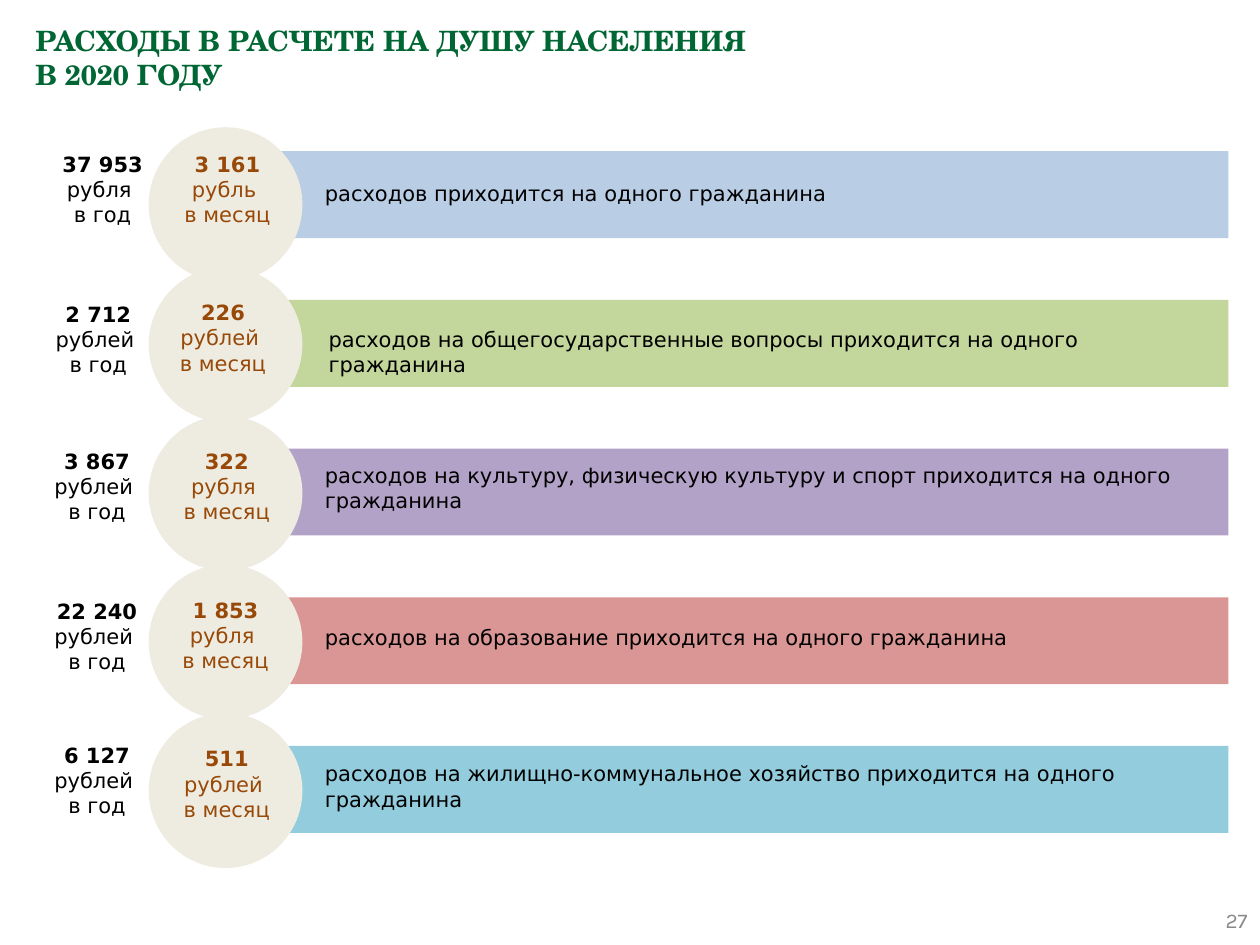
import pptx
import pptx.util
import pptx.dml.color
import pptx.enum.shapes
import pptx.enum.text

Inches = pptx.util.Inches
ALIGN = pptx.enum.text.PP_ALIGN
ANCHOR = pptx.enum.text.MSO_ANCHOR
AUTO_SIZE = pptx.enum.text.MSO_AUTO_SIZE
SHAPE = pptx.enum.shapes.MSO_SHAPE

COLORS = {
    "title": "006633", "page": "898989", "text": "000000", "monthly": "984807",
    "circle": "EEECE1", "total": "B9CDE5", "government": "C3D69B",
    "culture": "B3A2C7", "education": "D99694", "housing": "93CDDD",
}
BODY = {"name": "DejaVu Sans", "size": pptx.util.Pt(12), "bold": False}
BOLD = {**BODY, "bold": True}
TITLE = {"name": "TeX Gyre Schola", "size": pptx.util.Pt(16), "bold": True}
PAGE = {"name": "Karla", "size": pptx.util.Pt(12), "bold": False}

BAR_TOP, ROW_PITCH = 1.2, 1.18

presentation = pptx.Presentation()
presentation.slide_width, presentation.slide_height = Inches(10), Inches(7.5)
slide = presentation.slides.add_slide(presentation.slide_layouts[5])


def write(holder, lines, color, align=ALIGN.LEFT, anchor=ANCHOR.TOP, auto_size=AUTO_SIZE.NONE):
    """Fill a text holder with (text, font format) lines."""
    frame = holder.text_frame
    frame.word_wrap = True
    frame.auto_size = auto_size
    frame.vertical_anchor = anchor
    for number, (text, font_format) in enumerate(lines):
        paragraph = frame.add_paragraph() if number else frame.paragraphs[0]
        paragraph.alignment = align
        run = paragraph.add_run()
        run.text = text
        for attribute, value in font_format.items():
            setattr(run.font, attribute, value)
        run.font.color.rgb = pptx.dml.color.RGBColor.from_string(COLORS[color])


def add_plain_shape(kind, left, top, width, height, color):
    """Add a filled shape without outline or shadow."""
    shape = slide.shapes.add_shape(kind, Inches(left), Inches(top), Inches(width), Inches(height))
    shape.shadow.inherit = False
    shape.fill.solid()
    shape.fill.fore_color.rgb = pptx.dml.color.RGBColor.from_string(COLORS[color])
    shape.line.fill.background()


# Title
title = slide.shapes.title
title_place = {"left": 0.18, "top": 0.14, "width": 6.02, "height": 1.15}
for attribute, value in title_place.items():
    setattr(title, attribute, Inches(value))
write(title, [("РАСХОДЫ В РАСЧЕТЕ НА ДУШУ НАСЕЛЕНИЯ В 2020 ГОДУ", TITLE)], "title")

# Page number
page_number = slide.shapes.add_textbox(Inches(7.67), Inches(7.1), Inches(2.33), Inches(0.4))
write(page_number, [("27", PAGE)], "page", ALIGN.RIGHT, ANCHOR.MIDDLE)

# Rows: bar colour, circle top, then (left, top, width, text) of each label
rows = [
    ("total", 1.01,
     (0.28, 1.15, 1.07, ("37 953", "рубля ", "в год")),
     (1.34, 1.15, 0.93, ("3 161", "рубль ", "в месяц")),
     (2.48, 1.38, 7.29, "расходов приходится на одного гражданина")),
    ("government", 2.12,
     (0.27, 2.34, 1.02, ("2 712", "рублей ", "в год")),
     (1.26, 2.33, 1.02, ("226", "рублей ", "в месяц")),
     (2.51, 2.54, 7.29, "расходов на общегосударственные вопросы приходится на одного гражданина")),
    ("culture", 3.3,
     (0.26, 3.51, 1.02, ("3 867", "рублей ", "в год")),
     (1.29, 3.51, 1.02, ("322", "рубля ", "в месяц")),
     (2.48, 3.62, 7.32, "расходов на культуру, физическую культуру и спорт приходится на одного гражданина")),
    ("education", 4.48,
     (0.26, 4.7, 1.02, ("22 240", "рублей ", "в год")),
     (1.28, 4.69, 1.02, ("1 853", "рубля ", "в месяц")),
     (2.48, 4.91, 7.32, "расходов на образование приходится на одного гражданина")),
    ("housing", 5.66,
     (0.26, 5.84, 1.02, ("6 127", "рублей ", "в год")),
     (1.29, 5.87, 1.02, ("511", "рублей ", "в месяц")),
     (2.48, 5.99, 7.32, "расходов на жилищно-коммунальное хозяйство приходится на одного гражданина")),
]

for index, (topic, circle_top, yearly, monthly, purpose) in enumerate(rows):
    # Bar and circle
    add_plain_shape(SHAPE.RECTANGLE, 2.16, BAR_TOP + index * ROW_PITCH, 7.59, 0.69, topic)
    add_plain_shape(SHAPE.OVAL, 1.18, circle_top, 1.22, 1.23, "circle")

    # Yearly and monthly amounts
    for (left, top, width, words), color in ((yearly, "text"), (monthly, "monthly")):
        amount = slide.shapes.add_textbox(Inches(left), Inches(top), Inches(width), Inches(0.71))
        lines = list(zip(words, (BOLD, BODY, BODY)))
        write(amount, lines, color, ALIGN.CENTER, auto_size=AUTO_SIZE.SHAPE_TO_FIT_TEXT)

    # Purpose of the spending
    left, top, width, words = purpose
    description = slide.shapes.add_textbox(Inches(left), Inches(top), Inches(width), Inches(0.3))
    write(description, [(words, BODY)], "text", auto_size=AUTO_SIZE.SHAPE_TO_FIT_TEXT)

presentation.save("out.pptx")
